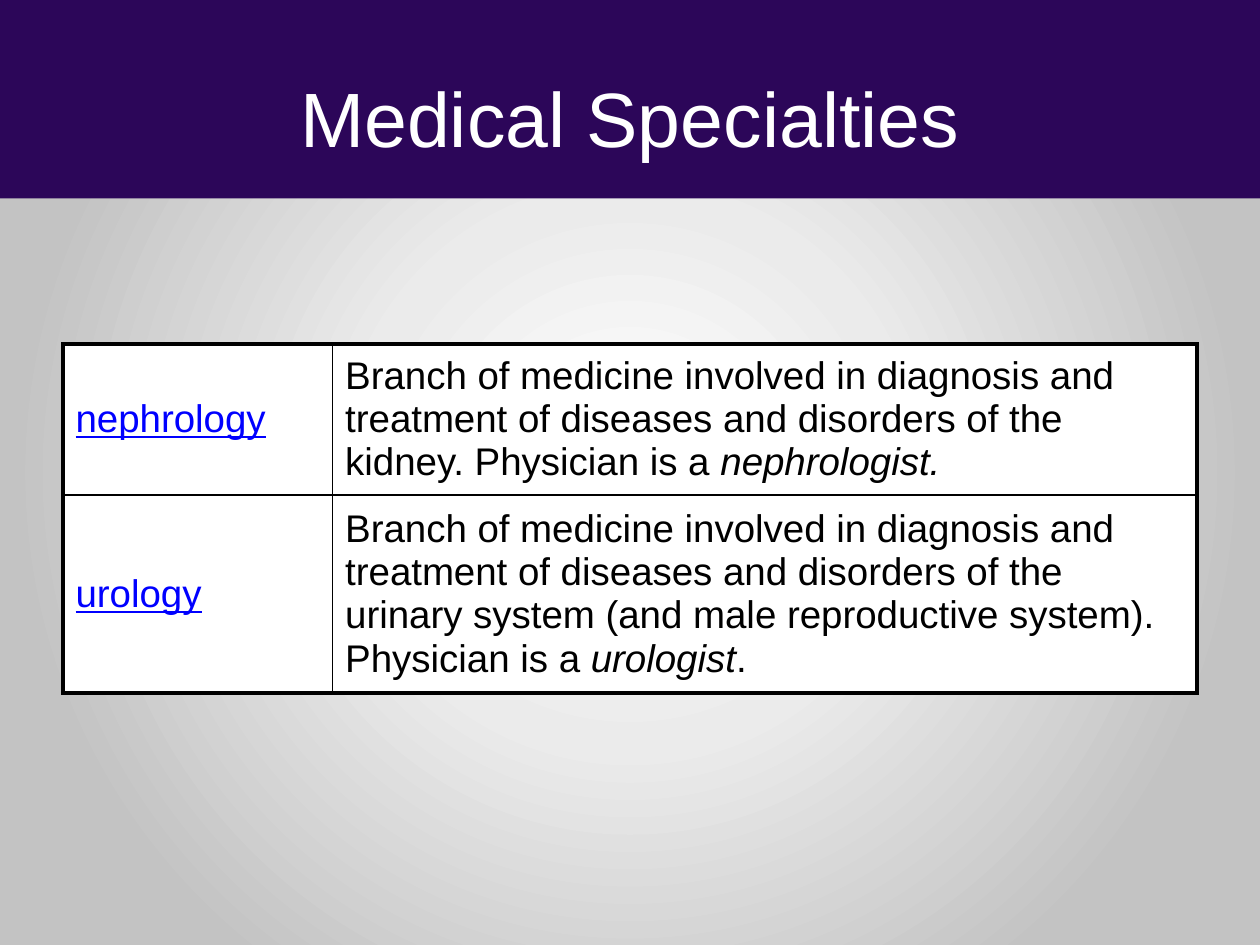
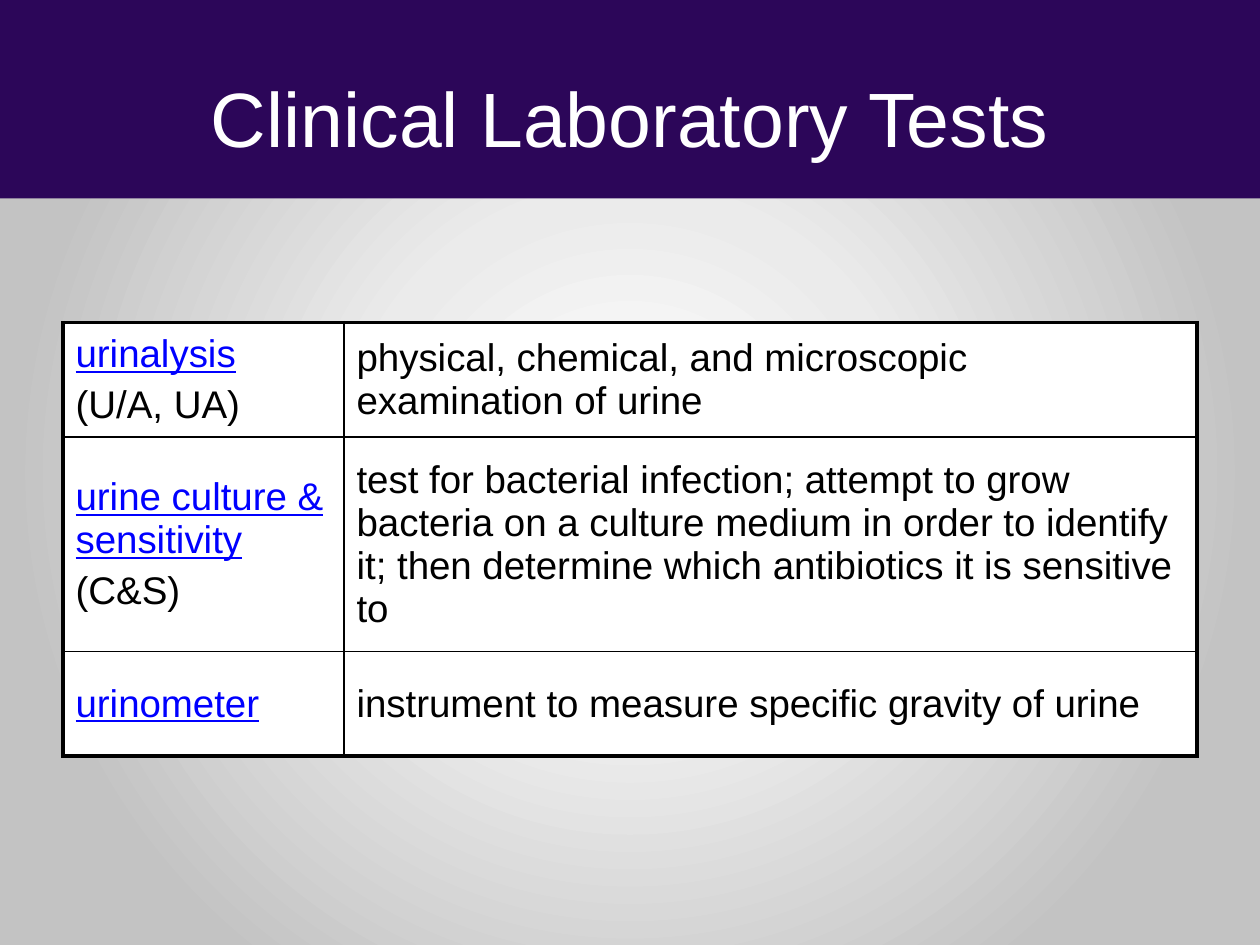
from dataclasses import dataclass

import pptx
import pptx.dml.color
import pptx.enum.shapes
import pptx.enum.text
import pptx.oxml
import pptx.oxml.ns
import pptx.util

COLORS = {
    "band": "2C0659",
    "title": "FFFFFF",
    "cell": "FFFFFF",
    "term": "0000FF",
    "text": "000000",
    "border": "000000",
}
BACKDROP_STOPS = ((2, "FFFFFF"), (35, "EBEBEB"), (79, "C3C3C3"))
FONT = "Arial"
TITLE_SIZE, TABLE_SIZE = 44, 22
OUTER_BORDER, INNER_BORDER = 2.25, 1
SLIDE_WIDTH, SLIDE_HEIGHT = pptx.util.Inches(10), pptx.util.Inches(7.5)
MARGIN = int(SLIDE_WIDTH * 0.05)
CONTENT_WIDTH = SLIDE_WIDTH - 2 * MARGIN
BAND_HEIGHT = int(SLIDE_HEIGHT * 0.21)


@dataclass(frozen=True)
class Entry:
    """A glossary row; asterisks in the definition enclose italic words."""

    term: str
    definition: str
    height: float
    abbreviation: str = ""


@dataclass(frozen=True)
class Glossary:
    title: str
    top: float
    term_width: float
    entries: tuple[Entry, ...]


GLOSSARIES = (
    Glossary("Medical Specialties", 2.73, 2.14, (
        Entry(
            "nephrology",
            "Branch of medicine involved in diagnosis and treatment of diseases and "
            "disorders of the kidney. Physician is a *nephrologist.*",
            1.2,
        ),
        Entry(
            "urology",
            "Branch of medicine involved in diagnosis and treatment of diseases and "
            "disorders of the urinary system (and male reproductive system). "
            "Physician is a *urologist*.",
            1.57,
        ),
    )),
    Glossary("Clinical Laboratory Tests", 2.56, 2.23, (
        Entry(
            "urinalysis",
            "physical, chemical, and microscopic examination of urine",
            0.91,
            "(U/A, UA)",
        ),
        Entry(
            "urine culture & sensitivity",
            "test for bacterial infection; attempt to grow bacteria on a culture medium "
            "in order to identify it; then determine which antibiotics it is sensitive to",
            1.7,
            "(C&S)",
        ),
        Entry("urinometer", "instrument to measure specific gravity of urine", 0.83),
    )),
)


def rgb(name: str) -> pptx.dml.color.RGBColor:
    return pptx.dml.color.RGBColor.from_string(COLORS[name])


def set_font(paragraph, size: float, color: str) -> None:
    paragraph.font.name = FONT
    paragraph.font.size = pptx.util.Pt(size)
    paragraph.font.color.rgb = rgb(color)


def set_backdrop(layout) -> None:
    """Give the layout a radial gradient centred on the slide."""
    layout.background.fill.gradient()
    gradient = layout.element.find(".//" + pptx.oxml.ns.qn("a:gradFill"))
    stops = "".join(
        f'<a:gs pos="{share * 1000}"><a:srgbClr val="{color}"/></a:gs>'
        for share, color in BACKDROP_STOPS
    )
    radial = pptx.oxml.parse_xml(
        f'<a:gradFill {pptx.oxml.ns.nsdecls("a")} rotWithShape="1">'
        f"<a:gsLst>{stops}</a:gsLst>"
        '<a:path path="circle"><a:fillToRect l="50000" t="50000" r="50000" b="50000"/>'
        "</a:path></a:gradFill>"
    )
    gradient.getparent().replace(gradient, radial)


def move_band_to_layout(slide, layout) -> None:
    """Draw the title band on a slide, then hand it to the layout all slides share."""
    band = slide.shapes.add_shape(
        pptx.enum.shapes.MSO_SHAPE.RECTANGLE, 0, 0, SLIDE_WIDTH, BAND_HEIGHT
    )
    band.shadow.inherit = False
    band.fill.solid()
    band.fill.fore_color.rgb = rgb("band")
    band.line.fill.background()
    layout.shapes.element.insert(2, band.element)


def add_title(slide, text: str) -> None:
    title = slide.shapes.title
    title.left, title.top = MARGIN, int(SLIDE_HEIGHT * 0.04)
    title.width, title.height = CONTENT_WIDTH, pptx.util.Inches(1.25)
    title.text_frame.text = text
    title.text_frame.vertical_anchor = pptx.enum.text.MSO_ANCHOR.MIDDLE
    heading = title.text_frame.paragraphs[0]
    heading.alignment = pptx.enum.text.PP_ALIGN.CENTER
    set_font(heading, TITLE_SIZE, "title")


def style_cell(cell, outer_sides: dict[str, bool]) -> None:
    """Border the cell, thicker on the sides marked as outer, and fill it."""
    properties = cell._tc.get_or_add_tcPr()
    for side, is_outer in outer_sides.items():
        width = pptx.util.Pt(OUTER_BORDER if is_outer else INNER_BORDER)
        properties.append(pptx.oxml.parse_xml(
            f'<a:ln{side} {pptx.oxml.ns.nsdecls("a")} w="{width}"><a:solidFill>'
            f'<a:srgbClr val="{COLORS["border"]}"/></a:solidFill></a:ln{side}>'
        ))
    cell.fill.solid()
    cell.fill.fore_color.rgb = rgb("cell")
    cell.vertical_anchor = pptx.enum.text.MSO_ANCHOR.MIDDLE


def format_entry_text(paragraph, color: str = "text") -> None:
    set_font(paragraph, TABLE_SIZE, color)
    paragraph.space_before = pptx.util.Pt(TABLE_SIZE * 0.2)


def write_term(cell, entry: Entry) -> None:
    term = cell.text_frame.paragraphs[0]
    term.text = entry.term
    format_entry_text(term, "term")
    term.font.underline = True
    if entry.abbreviation:
        abbreviation = cell.text_frame.add_paragraph()
        abbreviation.text = entry.abbreviation
        format_entry_text(abbreviation)


def write_definition(cell, definition: str) -> None:
    paragraph = cell.text_frame.paragraphs[0]
    format_entry_text(paragraph)
    for index, phrase in enumerate(definition.split("*")):
        if phrase:
            run = paragraph.add_run()
            run.text = phrase
            if index % 2:
                run.font.italic = True


def add_glossary_table(slide, glossary: Glossary) -> None:
    entries = glossary.entries
    last_row = len(entries) - 1
    height = pptx.util.Inches(sum(entry.height for entry in entries))
    table = slide.shapes.add_table(
        len(entries), 2, MARGIN, pptx.util.Inches(glossary.top), CONTENT_WIDTH, height
    ).table
    table.first_row = table.horz_banding = False
    term_width = pptx.util.Inches(glossary.term_width)
    table.columns[0].width = term_width
    table.columns[1].width = CONTENT_WIDTH - term_width
    for row, entry in enumerate(entries):
        table.rows[row].height = pptx.util.Inches(entry.height)
        write_term(table.cell(row, 0), entry)
        write_definition(table.cell(row, 1), entry.definition)
        for column in range(2):
            style_cell(table.cell(row, column), {
                "L": column == 0,
                "R": column == 1,
                "T": row == 0,
                "B": row == last_row,
            })


def main() -> None:
    presentation = pptx.Presentation()
    presentation.slide_width, presentation.slide_height = SLIDE_WIDTH, SLIDE_HEIGHT
    layout = presentation.slide_layouts.get_by_name("Title Only")
    set_backdrop(layout)
    for glossary in GLOSSARIES:
        slide = presentation.slides.add_slide(layout)
        add_title(slide, glossary.title)
        add_glossary_table(slide, glossary)
    move_band_to_layout(presentation.slides[0], layout)
    presentation.save("out.pptx")


if __name__ == "__main__":
    main()
